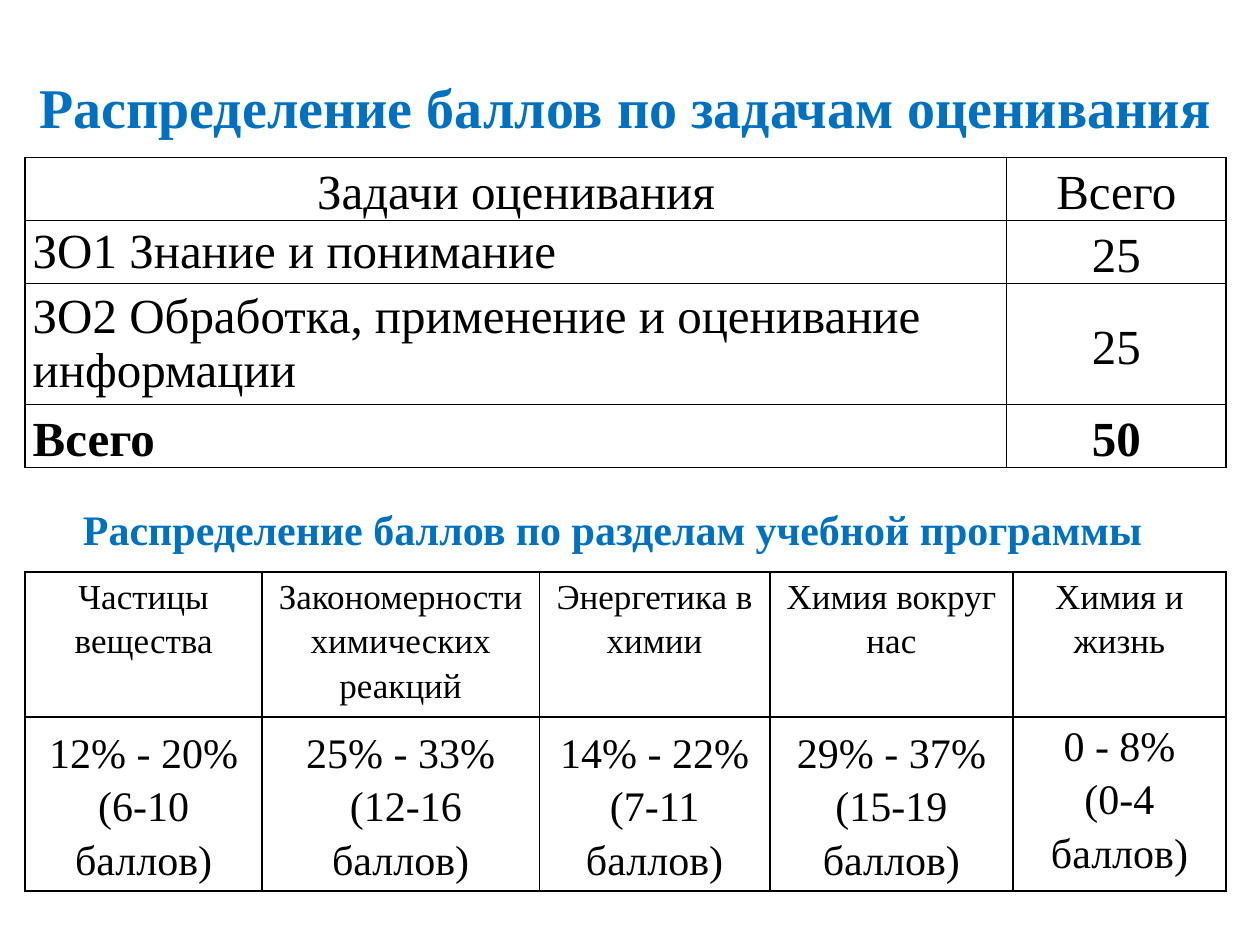
from lxml import etree
from pptx import Presentation
from pptx.dml.color import RGBColor
from pptx.enum.text import MSO_ANCHOR, PP_ALIGN
from pptx.oxml.ns import qn
from pptx.util import Inches, Pt

TOP, MIDDLE = MSO_ANCHOR.TOP, MSO_ANCHOR.MIDDLE
LEFT, CENTER = PP_ALIGN.LEFT, PP_ALIGN.CENTER
FONT = "Times New Roman"
COLORS = {"heading": "0070C0", "text": "000000", "border": "000000"}
TITLE_LAYOUT = 5

TASKS = [
    ("Задачи оценивания", "Всего"),
    ("ЗO1 Знание и понимание", "25"),
    ("ЗO2 Обработка, применение и оценивание информации", "25"),
    ("Всего", "50"),
]
SECTIONS = [
    ("Частицы вещества", "12% - 20%", "(6-10 баллов)"),
    ("Закономерности химических реакций", "25% - 33%", " (12-16 баллов)"),
    ("Энергетика в химии", "14% - 22%", "(7-11 баллов)"),
    ("Химия вокруг нас", "29% - 37%", "(15-19 баллов)"),
    ("Химия и жизнь", "0 - 8%", "(0-4 баллов)"),
]


def add_text(paragraph, text, size, color="text", bold=False):
    run = paragraph.add_run()
    run.text = text
    run.font.name = FONT
    run.font.size = Pt(size)
    run.font.bold = bold
    run.font.color.rgb = RGBColor.from_string(COLORS[color])


def set_borders(cell):
    properties = cell._tc.get_or_add_tcPr()
    for position, side in enumerate(("a:lnL", "a:lnR", "a:lnT", "a:lnB")):
        line = etree.Element(qn(side), w=str(Pt(1)))
        fill = etree.SubElement(line, qn("a:solidFill"))
        etree.SubElement(fill, qn("a:srgbClr"), val=COLORS["border"])
        properties.insert(position, line)


def fill_cell(cell, lines, size, align=CENTER, anchor=MIDDLE, bold=False,
              spacing=1.15, before=0):
    cell.fill.background()
    set_borders(cell)
    cell.vertical_anchor = anchor
    cell.margin_left = cell.margin_right = Inches(0.06)
    cell.margin_top = cell.margin_bottom = 0
    frame = cell.text_frame
    for index, line in enumerate(lines):
        paragraph = frame.add_paragraph() if index else frame.paragraphs[0]
        paragraph.alignment = align
        paragraph.line_spacing = spacing
        paragraph.space_before = Pt(before)
        add_text(paragraph, line, size, bold=bold)


def add_grid(slide, left, top, widths, heights):
    """Add an unstyled table with the given column widths and row heights."""
    table = slide.shapes.add_table(
        len(heights), len(widths), Inches(left), Inches(top),
        Inches(sum(widths)), Inches(sum(heights))).table
    table.first_row = table.horz_banding = False
    for column, width in zip(table.columns, widths):
        column.width = Inches(width)
    for row, height in zip(table.rows, heights):
        row.height = Inches(height)
    return table


def add_title(slide, left, top, width, height):
    title = slide.shapes.title
    title.left, title.top = Inches(left), Inches(top)
    title.width, title.height = Inches(width), Inches(height)
    title.text_frame.vertical_anchor = MIDDLE
    paragraph = title.text_frame.paragraphs[0]
    paragraph.alignment = CENTER
    add_text(paragraph, "Распределение баллов по задачам оценивания",
             32, "heading", True)


def add_tasks_table(slide, left, top):
    table = add_grid(slide, left, top, [7.79, 1.74], [0.5, 0.5, 0.96, 0.5])
    last = len(TASKS) - 1
    for index, (task, points) in enumerate(TASKS):
        bold = index == last
        is_task = 0 < index < last
        fill_cell(table.cell(index, 0), [task], 28,
                  align=LEFT if index else CENTER, bold=bold,
                  spacing=1.0 if is_task else 1.15,
                  before=12 if is_task else 0)
        fill_cell(table.cell(index, 1), [points], 28, bold=bold)


def add_subtitle(slide, left, top, width, height):
    box = slide.shapes.add_textbox(
        Inches(left), Inches(top), Inches(width), Inches(height))
    box.text_frame.word_wrap = False
    add_text(box.text_frame.paragraphs[0],
             "Распределение баллов по разделам учебной программы",
             24, "heading", True)


def add_sections_table(slide, left, top):
    table = add_grid(slide, left, top, [1.88, 2.2, 1.83, 1.93, 1.69],
                     [1.15, 1.38])
    last = len(SECTIONS) - 1
    for index, (section, share, points) in enumerate(SECTIONS):
        fill_cell(table.cell(0, index), [section], 20, anchor=TOP)
        fill_cell(table.cell(1, index), [share, points], 24,
                  anchor=TOP if index == last else MIDDLE)


def main():
    presentation = Presentation()
    presentation.slide_width = Inches(10)
    presentation.slide_height = Inches(7.5)
    slide = presentation.slides.add_slide(
        presentation.slide_layouts[TITLE_LAYOUT])
    add_title(slide, 0.2, 0.12, 9.53, 1.45)
    add_tasks_table(slide, 0.2, 1.25)
    add_subtitle(slide, 0.56, 3.95, 8.78, 0.91)
    add_sections_table(slide, 0.2, 4.54)
    presentation.save("out.pptx")


if __name__ == "__main__":
    main()
